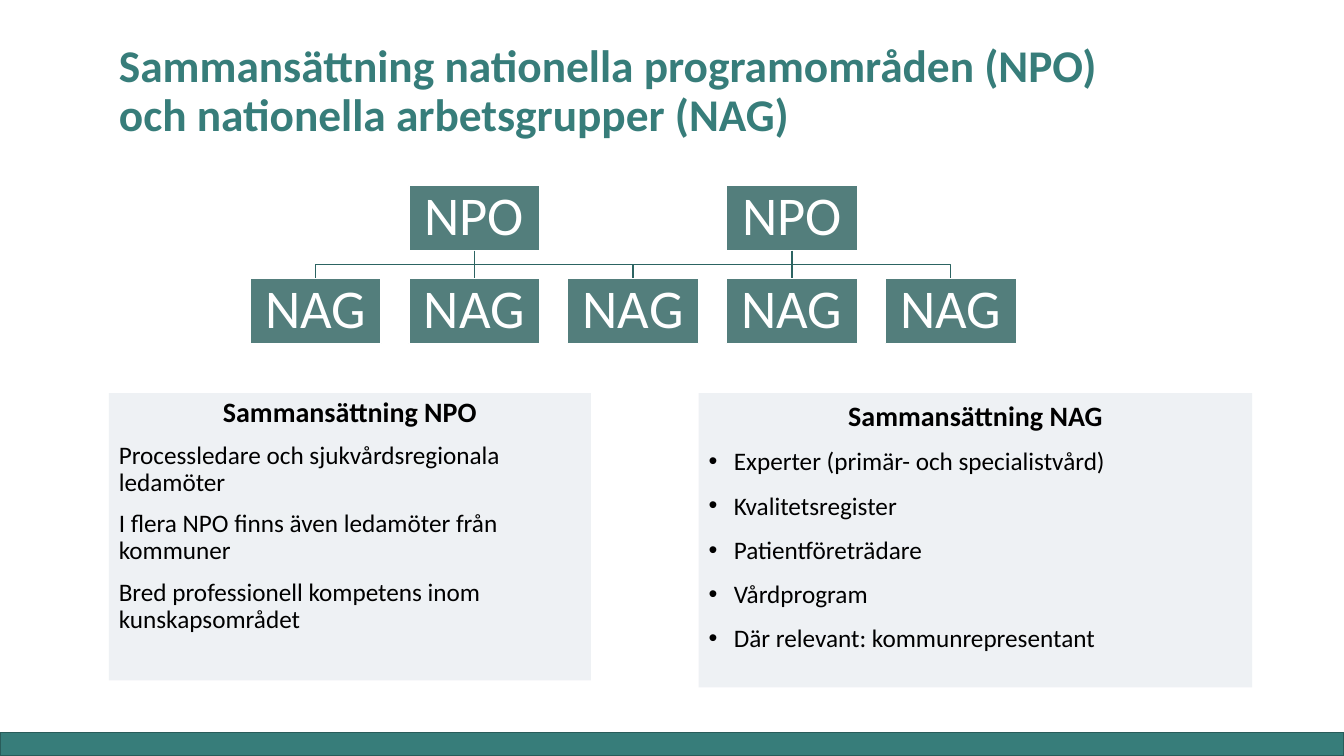
from dataclasses import dataclass

from lxml import etree
from pptx import Presentation
from pptx.dml.color import RGBColor
from pptx.enum.shapes import MSO_CONNECTOR, MSO_SHAPE
from pptx.enum.text import MSO_ANCHOR, MSO_AUTO_SIZE, PP_ALIGN
from pptx.oxml.ns import qn
from pptx.util import Inches, Pt

RECTANGLE = MSO_SHAPE.RECTANGLE
STRAIGHT = MSO_CONNECTOR.STRAIGHT
TOP, MIDDLE, BOTTOM = MSO_ANCHOR.TOP, MSO_ANCHOR.MIDDLE, MSO_ANCHOR.BOTTOM
LEFT, CENTER = PP_ALIGN.LEFT, PP_ALIGN.CENTER
NO_AUTOFIT = MSO_AUTO_SIZE.NONE
TOP_SIDE, BOTTOM_SIDE = 0, 2


@dataclass(frozen=True)
class Theme:
    font: str = "Calibri"
    accent: str = "377D7A"
    accent_edge: str = "295C5A"
    box: str = "295E5C"
    branch: str = "2C6462"
    panel: str = "D6DCE5"
    light: str = "FFFFFF"
    dark: str = "000000"
    title_size: float = 32.4
    box_size: float = 39
    heading_size: float = 20
    body_size: float = 18


THEME = Theme()

# Organisation chart grid, in inches
BOX_WIDTH, BOX_HEIGHT = 1.3, 0.65
FIRST_BOX_LEFT, COLUMN_STEP = 2.48, 1.575
NPO_TOP, NAG_TOP = 1.84, 2.76
NAG_COUNT = 5
NPO_COLUMNS = (1, 3)

NPO_MEMBERS = (
    "Processledare och sjukvårdsregionala ledamöter",
    "I flera NPO finns även ledamöter från kommuner",
    "Bred professionell kompetens inom kunskapsområdet",
)
NAG_MEMBERS = (
    "Experter (primär- och specialistvård)",
    "Kvalitetsregister",
    "Patientföreträdare",
    "Vårdprogram",
    "Där relevant: kommunrepresentant",
)


def color(value):
    return RGBColor.from_string(value)


def style_paragraph(paragraph, size, text_color, bold=False, align=LEFT, spacing=0.9):
    paragraph.alignment = align
    paragraph.line_spacing = spacing
    for run in paragraph.runs:
        run.font.name = THEME.font
        run.font.size = Pt(size)
        run.font.bold = bold
        run.font.color.rgb = color(text_color)


def add_rectangle(slide, left, top, width, height, fill, opacity=100, edge=None):
    rectangle = slide.shapes.add_shape(
        RECTANGLE, Inches(left), Inches(top), Inches(width), Inches(height))
    rectangle.shadow.inherit = False
    rectangle.fill.solid()
    rectangle.fill.fore_color.rgb = color(fill)
    if opacity < 100:
        solid_color = rectangle.fill._xPr.find(qn("a:solidFill"))[0]
        etree.SubElement(solid_color, qn("a:alpha")).set("val", str(opacity * 1000))
    if edge:
        rectangle.line.color.rgb = color(edge)
        rectangle.line.width = Pt(1)
    else:
        rectangle.line.fill.background()
    return rectangle


def add_title(slide, text):
    title = slide.shapes.title
    title.left, title.top = Inches(1.08), Inches(0.78)
    title.width, title.height = Inches(10.97), Inches(0.67)
    frame = title.text_frame
    frame.text = text
    frame.word_wrap = True
    frame.auto_size = NO_AUTOFIT
    frame.vertical_anchor = BOTTOM
    style_paragraph(frame.paragraphs[0], THEME.title_size, THEME.accent, bold=True)


def add_group_box(slide, label, column, top):
    box = add_rectangle(slide, FIRST_BOX_LEFT + column * COLUMN_STEP, top,
                        BOX_WIDTH, BOX_HEIGHT, THEME.box, 80, THEME.light)
    frame = box.text_frame
    frame.text = label
    frame.word_wrap = True
    frame.vertical_anchor = MIDDLE
    frame.margin_left = frame.margin_right = Inches(0.03)
    frame.margin_top = frame.margin_bottom = Inches(0.03)
    style_paragraph(frame.paragraphs[0], THEME.box_size, THEME.light, align=CENTER)
    return box


def style_branch(branch):
    branch.line.color.rgb = color(THEME.branch)
    branch.line.width = Pt(1)


def add_straight_branch(slide, npo, nag):
    branch = slide.shapes.add_connector(STRAIGHT, 0, 0, 0, 0)
    branch.begin_connect(npo, BOTTOM_SIDE)
    branch.end_connect(nag, TOP_SIDE)
    style_branch(branch)
    etree.SubElement(branch._element.spPr, qn("a:effectLst"))


def add_elbow_branch(slide, npo, nag):
    start_x, end_x = npo.left + npo.width // 2, nag.left + nag.width // 2
    start_y, end_y = npo.top + npo.height, nag.top
    middle_y = (start_y + end_y) // 2
    outline = slide.shapes.build_freeform(start_x, start_y)
    outline.add_line_segments(
        [(start_x, middle_y), (end_x, middle_y), (end_x, end_y)], close=False)
    branch = outline.convert_to_shape()
    branch.shadow.inherit = False
    branch.fill.background()
    style_branch(branch)


def add_organisation(slide):
    nag_boxes = [add_group_box(slide, "NAG", column, NAG_TOP)
                 for column in range(NAG_COUNT)]
    for column in NPO_COLUMNS:
        npo = add_group_box(slide, "NPO", column, NPO_TOP)
        add_straight_branch(slide, npo, nag_boxes[column])
        for neighbour in (column - 1, column + 1):
            add_elbow_branch(slide, npo, nag_boxes[neighbour])


def add_bullet(paragraph):
    properties = paragraph._p.get_or_add_pPr()
    properties.set("marL", str(Inches(0.25)))
    properties.set("indent", str(-Inches(0.25)))
    etree.SubElement(properties, qn("a:buFont")).set("typeface", "Arial")
    etree.SubElement(properties, qn("a:buChar")).set("char", "•")


def add_panel(slide, left, width, height, heading, members, spacing, bulleted=False):
    panel = add_rectangle(slide, left, 3.9, width, height, THEME.panel, 40)
    frame = panel.text_frame
    frame.text = "\n".join((heading, *members))
    frame.word_wrap = True
    frame.vertical_anchor = TOP
    heading_line, *member_lines = frame.paragraphs
    style_paragraph(heading_line, THEME.heading_size, THEME.dark, True, CENTER, spacing)
    for line in member_lines:
        style_paragraph(line, THEME.body_size, THEME.dark, spacing=spacing)
        line.space_before = Pt(10)
        if bulleted:
            add_bullet(line)
    heading_line.space_before = Pt(10)


def main():
    presentation = Presentation()
    presentation.slide_width = Inches(13.33)
    presentation.slide_height = Inches(7.5)
    slide = presentation.slides.add_slide(presentation.slide_layouts[5])

    # Footer band and title
    add_rectangle(slide, 0, 7.27, 13.33, 0.23, THEME.accent, edge=THEME.accent_edge)
    add_title(slide, "Sammansättning nationella programområden (NPO)\v"
                     "och nationella arbetsgrupper (NAG)")

    # Programme areas and their working groups
    add_organisation(slide)

    # Who sits in each kind of group
    add_panel(slide, 1.08, 4.78, 2.85, "Sammansättning NPO", NPO_MEMBERS, 0.9)
    add_panel(slide, 6.93, 5.49, 2.92, "Sammansättning NAG", NAG_MEMBERS, 1.0,
              bulleted=True)

    presentation.save("out.pptx")


if __name__ == "__main__":
    main()
